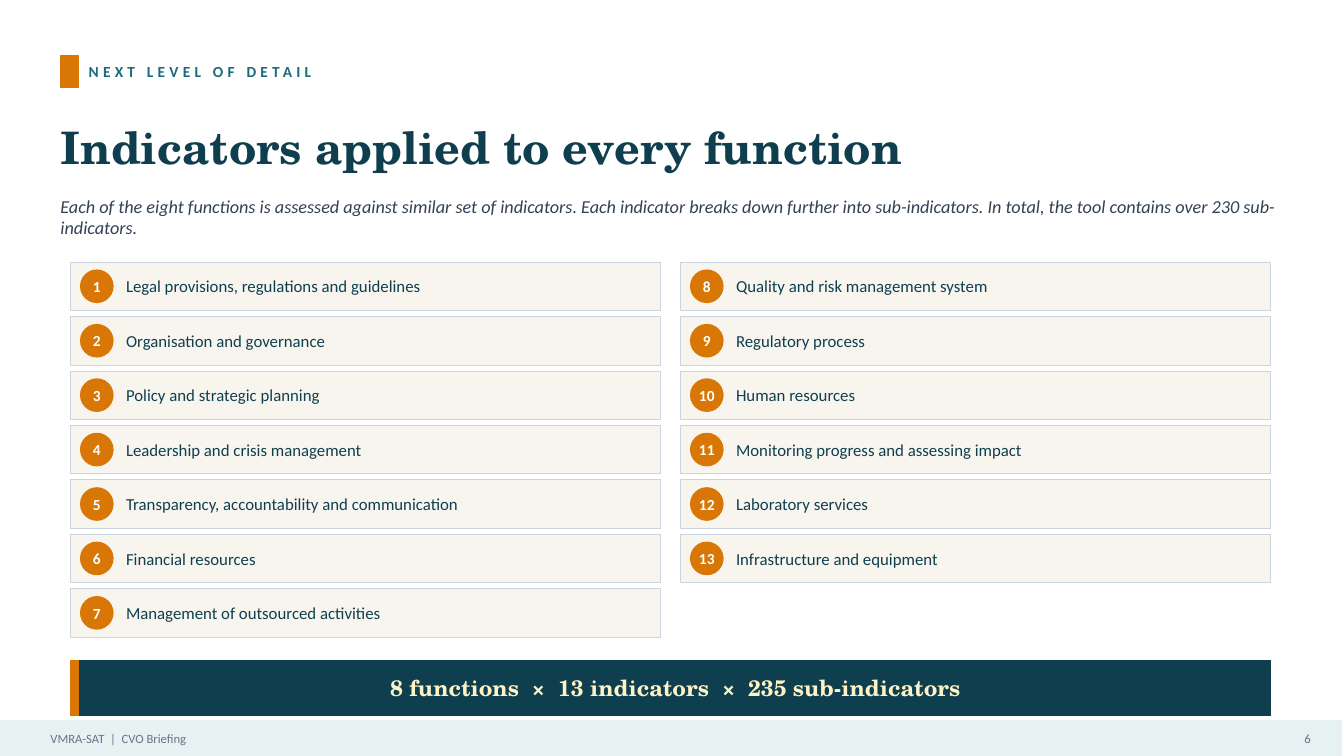
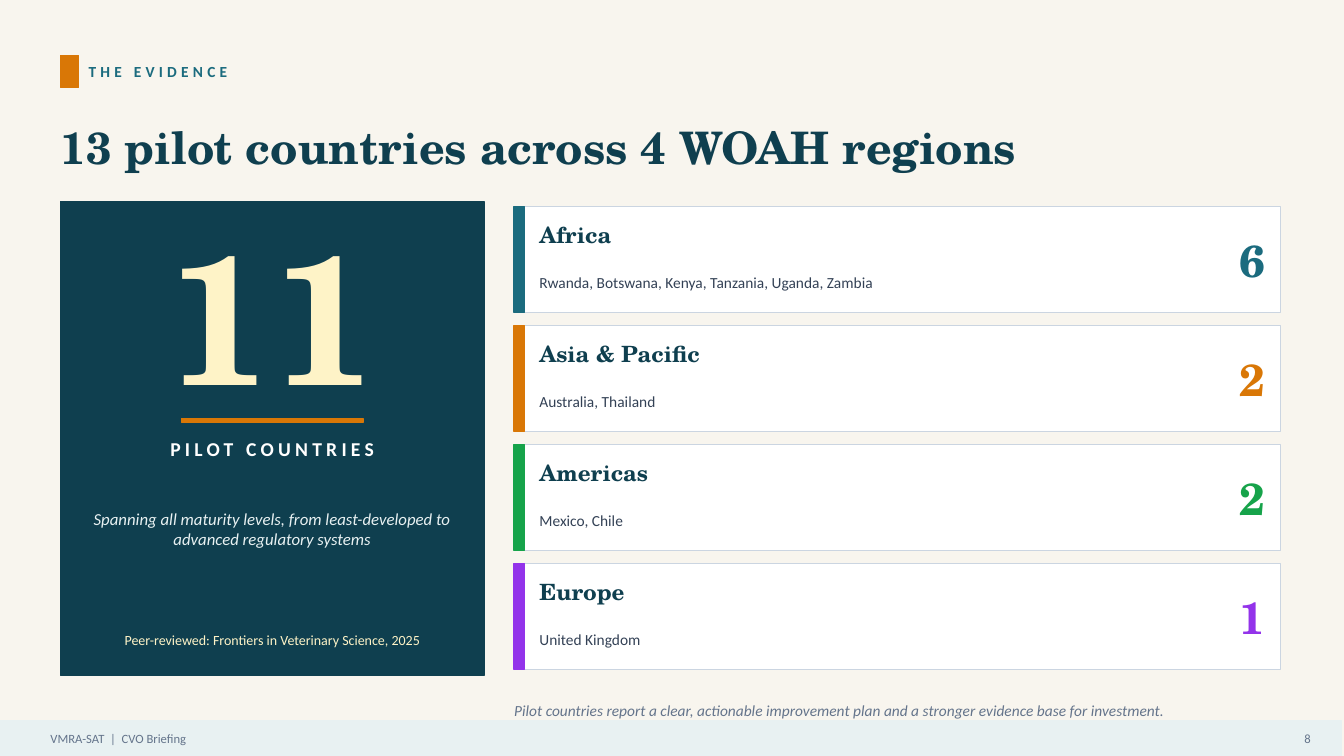
"""Build two briefing slides on assessment indicators and pilot countries."""
from pptx import Presentation
from pptx.dml.color import RGBColor
from pptx.enum.shapes import MSO_SHAPE
from pptx.enum.text import MSO_ANCHOR, PP_ALIGN
from pptx.util import Inches, Pt

RECTANGLE, OVAL = MSO_SHAPE.RECTANGLE, MSO_SHAPE.OVAL
MIDDLE = MSO_ANCHOR.MIDDLE
LEFT, CENTER, RIGHT = PP_ALIGN.LEFT, PP_ALIGN.CENTER, PP_ALIGN.RIGHT
SANS, SERIF = "Calibri", "TeX Gyre Schola"
COLORS = {
    "navy": "0F3F4F", "teal": "1B6B7E", "orange": "D97706", "green": "16A34A",
    "purple": "9333EA", "cream": "F8F5EE", "butter": "FEF3C7", "mist": "E8F1F2",
    "white": "FFFFFF", "border": "CBD5E1", "slate": "334155", "gray": "64748B",
}

FOOTER = "VMRA-SAT  |  CVO Briefing"
INDICATOR_SLIDE = {
    "kicker": "NEXT LEVEL OF DETAIL",
    "title": "Indicators applied to every function",
    "number": "6",
    "background": "white",
}
INTRO = (
    "Each of the eight functions is assessed against similar set of indicators. "
    "Each indicator breaks down further into sub-indicators. "
    "In total, the tool contains over 230 sub-indicators."
)
INDICATORS = [
    "Legal provisions, regulations and guidelines",
    "Organisation and governance",
    "Policy and strategic planning",
    "Leadership and crisis management",
    "Transparency, accountability and communication",
    "Financial resources",
    "Management of outsourced activities",
    "Quality and risk management system",
    "Regulatory process",
    "Human resources",
    "Monitoring progress and assessing impact",
    "Laboratory services",
    "Infrastructure and equipment",
]
ROWS_PER_COLUMN = 7
SUMMARY = "8 functions  ×  13 indicators  ×  235 sub-indicators"

EVIDENCE_SLIDE = {
    "kicker": "THE EVIDENCE",
    "title": "13 pilot countries across 4 WOAH regions",
    "number": "8",
    "background": "cream",
}
PILOT_COUNT = "11"
PILOT_LABEL = "PILOT COUNTRIES"
PILOT_SCOPE = "Spanning all maturity levels, from least-developed to advanced regulatory systems"
PILOT_SOURCE = "Peer-reviewed: Frontiers in Veterinary Science, 2025"
REGIONS = [
    ("Africa", "Rwanda, Botswana, Kenya, Tanzania, Uganda, Zambia", "6", "teal"),
    ("Asia & Pacific", "Australia, Thailand", "2", "orange"),
    ("Americas", "Mexico, Chile", "2", "green"),
    ("Europe", "United Kingdom", "1", "purple"),
]
EVIDENCE_NOTE = (
    "Pilot countries report a clear, actionable improvement plan "
    "and a stronger evidence base for investment."
)


def color(name):
    return RGBColor.from_string(COLORS[name])


def write(box, text, size, ink, font=SANS, bold=False, italic=False, align=LEFT, spacing=0):
    frame = box.text_frame
    frame.word_wrap = True
    frame.vertical_anchor = MIDDLE
    frame.margin_left = frame.margin_right = frame.margin_top = frame.margin_bottom = 0
    frame.text = text
    paragraph = frame.paragraphs[0]
    paragraph.alignment = align
    span = paragraph.runs[0]
    span.font.name = font
    span.font.size = Pt(size)
    span.font.bold = bold
    span.font.italic = italic
    span.font.color.rgb = color(ink)
    if spacing:
        span.font._element.set("spc", str(spacing * 100))


def add_text(page, left, top, width, height, text, size, ink, **style):
    box = page.shapes.add_textbox(Inches(left), Inches(top), Inches(width), Inches(height))
    write(box, text, size, ink, **style)


def add_block(page, left, top, width, height, fill, line=None, weight=1, kind=RECTANGLE):
    block = page.shapes.add_shape(
        kind, Inches(left), Inches(top), Inches(width), Inches(height)
    )
    block.shadow.inherit = False
    block.fill.solid()
    block.fill.fore_color.rgb = color(fill)
    block.line.color.rgb = color(line or fill)
    block.line.width = Pt(weight)
    return block


def add_page(deck, heading):
    page = deck.slides.add_slide(deck.slide_layouts[6])
    page.background.fill.solid()
    page.background.fill.fore_color.rgb = color(heading["background"])
    add_block(page, 0.6, 0.55, 0.18, 0.32, "orange")
    add_text(page, 0.88, 0.55, 6, 0.32, heading["kicker"], 11, "teal", bold=True, spacing=3)
    add_text(page, 0.6, 1, 12.1, 0.9, heading["title"], 32, "navy", font=SERIF, bold=True)
    return page


def add_footer(page, heading):
    add_block(page, 0, 7.15, 13.3, 0.35, "mist")
    add_text(page, 0.5, 7.18, 6, 0.3, FOOTER, 9, "gray")
    add_text(page, 12.5, 7.18, 0.5, 0.3, heading["number"], 9, "gray", align=RIGHT)


def add_indicator(page, index, label):
    column, row = divmod(index, ROWS_PER_COLUMN)
    left = 0.7 + column * 6.05
    top = 2.6 + row * 0.54
    add_block(page, left, top, 5.85, 0.48, "cream", "border", 0.5)
    badge = add_block(page, left + 0.1, top + 0.08, 0.32, 0.32, "orange", kind=OVAL)
    write(badge, str(index + 1), 11, "white", bold=True, align=CENTER)
    badge.text_frame.word_wrap = False
    add_text(page, left + 0.55, top, 5.15, 0.48, label, 12, "navy")


def build_indicators(deck):
    page = add_page(deck, INDICATOR_SLIDE)
    add_text(page, 0.6, 1.85, 12.1, 0.6, INTRO, 13, "slate", italic=True)
    for index, label in enumerate(INDICATORS):
        add_indicator(page, index, label)
    add_block(page, 0.7, 6.55, 11.9, 0.55, "navy")
    add_block(page, 0.7, 6.55, 0.08, 0.55, "orange")
    add_text(page, 0.9, 6.55, 11.6, 0.55, SUMMARY, 16, "butter",
             font=SERIF, bold=True, align=CENTER)
    add_footer(page, INDICATOR_SLIDE)


def add_pilot_panel(page):
    add_block(page, 0.6, 2, 4.2, 4.7, "navy")
    add_text(page, 0.6, 2.2, 4.2, 1.8, PILOT_COUNT, 130, "butter",
             font=SERIF, bold=True, align=CENTER)
    add_block(page, 1.8, 4.15, 1.8, 0.04, "orange")
    add_text(page, 0.6, 4.25, 4.2, 0.4, PILOT_LABEL, 14, "white",
             bold=True, align=CENTER, spacing=3)
    add_text(page, 0.85, 4.75, 3.7, 1, PILOT_SCOPE, 12, "mist", italic=True, align=CENTER)
    add_text(page, 0.85, 6.1, 3.7, 0.5, PILOT_SOURCE, 10, "butter", align=CENTER)


def add_region(page, top, region, countries, count, accent):
    add_block(page, 5.1, top, 7.6, 1.05, "white", "border", 0.5)
    add_block(page, 5.1, top, 0.1, 1.05, accent)
    add_text(page, 5.35, top + 0.08, 4.5, 0.4, region, 16, "navy", font=SERIF, bold=True)
    add_text(page, 5.35, top + 0.5, 6.5, 0.5, countries, 11, "slate")
    add_text(page, 11.7, top + 0.18, 0.85, 0.7, count, 32, accent,
             font=SERIF, bold=True, align=RIGHT)


def build_evidence(deck):
    page = add_page(deck, EVIDENCE_SLIDE)
    add_pilot_panel(page)
    for index, region in enumerate(REGIONS):
        add_region(page, 2.05 + index * 1.18, *region)
    add_text(page, 5.1, 6.85, 7.6, 0.4, EVIDENCE_NOTE, 11, "gray", italic=True)
    add_footer(page, EVIDENCE_SLIDE)


def main():
    deck = Presentation()
    deck.slide_width = Inches(13.33)
    deck.slide_height = Inches(7.5)
    build_indicators(deck)
    build_evidence(deck)
    deck.save("out.pptx")


if __name__ == "__main__":
    main()
